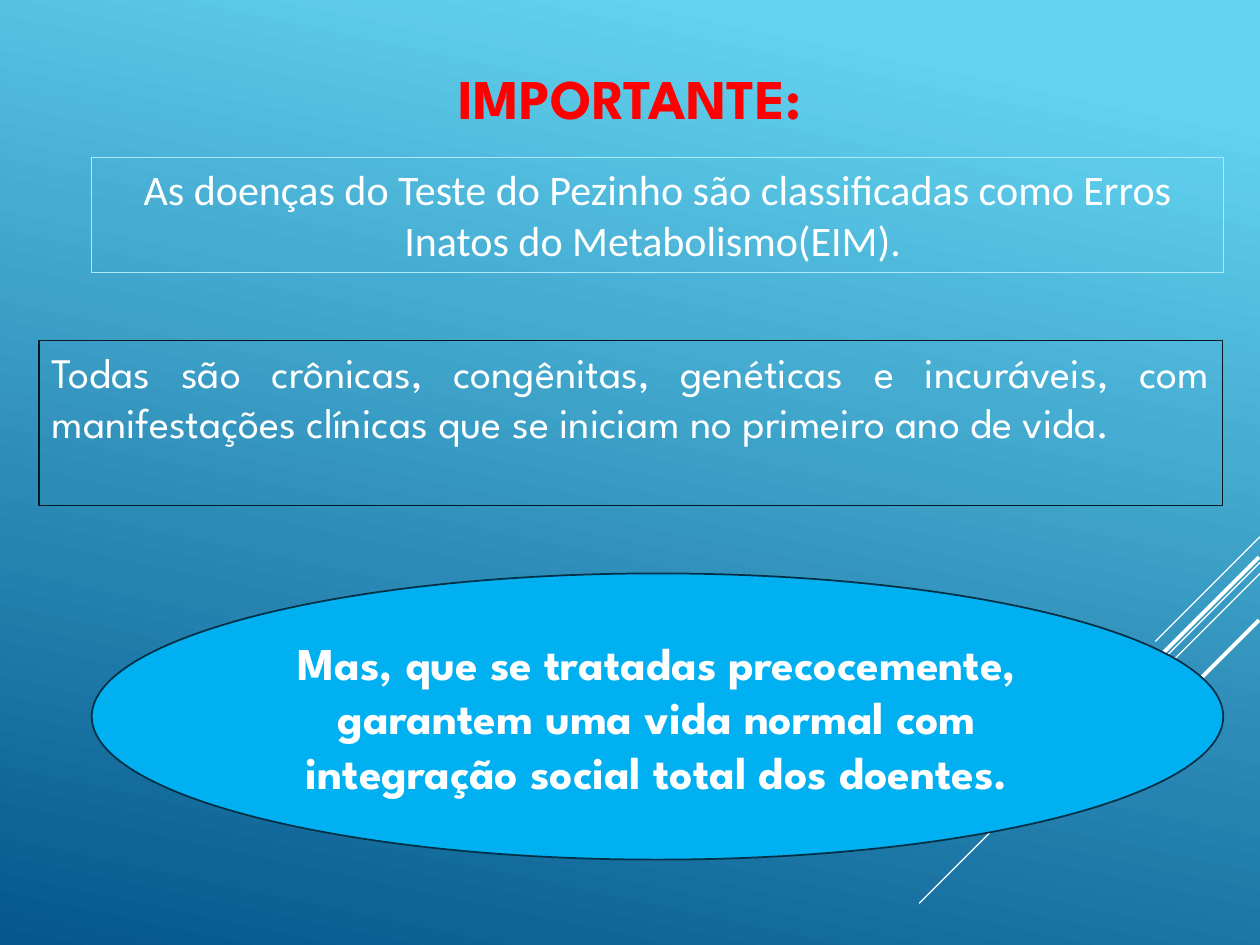
from pptx import Presentation
from pptx.dml.color import RGBColor
from pptx.enum.shapes import MSO_CONNECTOR, MSO_SHAPE
from pptx.enum.text import MSO_ANCHOR, PP_ALIGN
from pptx.oxml.ns import qn
from pptx.util import Cm, Pt
from lxml.etree import SubElement

COLORS = {
    "sky": "62D2EF", "deep": "05578D", "white": "FFFFFF", "red": "FF0000",
    "pale": "ACE9F8", "dark": "041825", "oval": "00B0F0", "oval_edge": "023046",
}
SPARTAN = "League Spartan"

# Diagonal rays: right end x, y, then run to the lower left (cm), width (pt)
RAYS = [
    (25.4, 10.82, 2.11, 0.75),
    (25.4, 11.34, 6.87, 0.75),
    (25.4, 11.56, 4.37, 0.75),
    (25.38, 11.23, 3.99, 2.25),
    (25.38, 12.5, 2.9, 2.25),
]

# Text blocks: kind, place (cm), outline and fill, paragraphs, text format
BLOCKS = [
    dict(place=(1.27, 0.36, 22.86, 3.18), lines=["IMPORTANTE:"],
         format=dict(size=32, color="red", bold=True, anchor=MSO_ANCHOR.MIDDLE)),
    dict(kind=MSO_SHAPE.RECTANGLE, place=(1.85, 3.18, 22.81, 2.31), edge="pale",
         lines=["As doenças do Teste do Pezinho são classificadas como Erros "
                "Inatos do Metabolismo(EIM). "],
         format=dict(font="Calibri")),
    dict(kind=MSO_SHAPE.RECTANGLE, place=(0.79, 6.86, 23.85, 3.33), edge="dark",
         lines=["Todas são crônicas, congênitas, genéticas e incuráveis, com "
                "manifestações clínicas que se iniciam no primeiro ano de vida. "],
         format=dict(align=PP_ALIGN.JUSTIFY)),
    dict(kind=MSO_SHAPE.OVAL, place=(1.85, 11.56, 22.81, 5.77), edge="oval_edge",
         edge_width=1, fill="oval",
         lines=["Mas, que se tratadas precocemente,",
                "garantem uma vida normal com integração social total dos doentes."],
         format=dict(size=26, bold=True, anchor=MSO_ANCHOR.MIDDLE)),
]


def rgb(name):
    return RGBColor.from_string(COLORS[name])


def write(shape, lines, size=24, color="white", font=SPARTAN, bold=False,
          align=PP_ALIGN.CENTER, anchor=MSO_ANCHOR.TOP):
    frame = shape.text_frame
    frame.word_wrap = True
    frame.vertical_anchor = anchor
    for index, line in enumerate(lines):
        para = frame.add_paragraph() if index else frame.paragraphs[0]
        para.alignment = align
        span = para.add_run()
        span.text = line
        span.font.name = font
        span.font.size = Pt(size)
        span.font.bold = bold
        span.font.color.rgb = rgb(color)


def add_ray(page, right, top, run, width):
    ray = page.shapes.add_connector(
        MSO_CONNECTOR.STRAIGHT, Cm(right), Cm(top), Cm(right - run), Cm(top + run))
    ray.line.color.rgb = rgb("white")
    ray.line.width = Pt(width)
    SubElement(ray._element.spPr, qn("a:effectLst"))


def add_block(page, place, lines, format, kind=None, edge=None, edge_width=0.75,
              fill=None):
    place = [Cm(length) for length in place]
    if kind is None:
        box = page.shapes.add_textbox(*place)
    else:
        box = page.shapes.add_shape(kind, *place)
        box.shadow.inherit = False
        box.line.color.rgb = rgb(edge)
        box.line.width = Pt(edge_width)
        if fill:
            box.fill.solid()
            box.fill.fore_color.rgb = rgb(fill)
        else:
            box.fill.background()
    write(box, lines, **format)


def main():
    deck = Presentation()
    deck.slide_width, deck.slide_height = Cm(25.4), Cm(19.05)
    page = deck.slides.add_slide(deck.slide_layouts[6])

    # Background gradient, clear sky down to deep blue
    backdrop = page.background.fill
    backdrop.gradient()
    backdrop.gradient_angle = 360 - 102
    for stop, (name, position) in zip(backdrop.gradient_stops,
                                      [("sky", 0.1), ("deep", 1)]):
        stop.color.rgb = rgb(name)
        stop.position = position

    # Rays behind, then the text blocks
    for ray in RAYS:
        add_ray(page, *ray)
    for block in BLOCKS:
        add_block(page, **block)

    deck.save("out.pptx")


if __name__ == "__main__":
    main()
